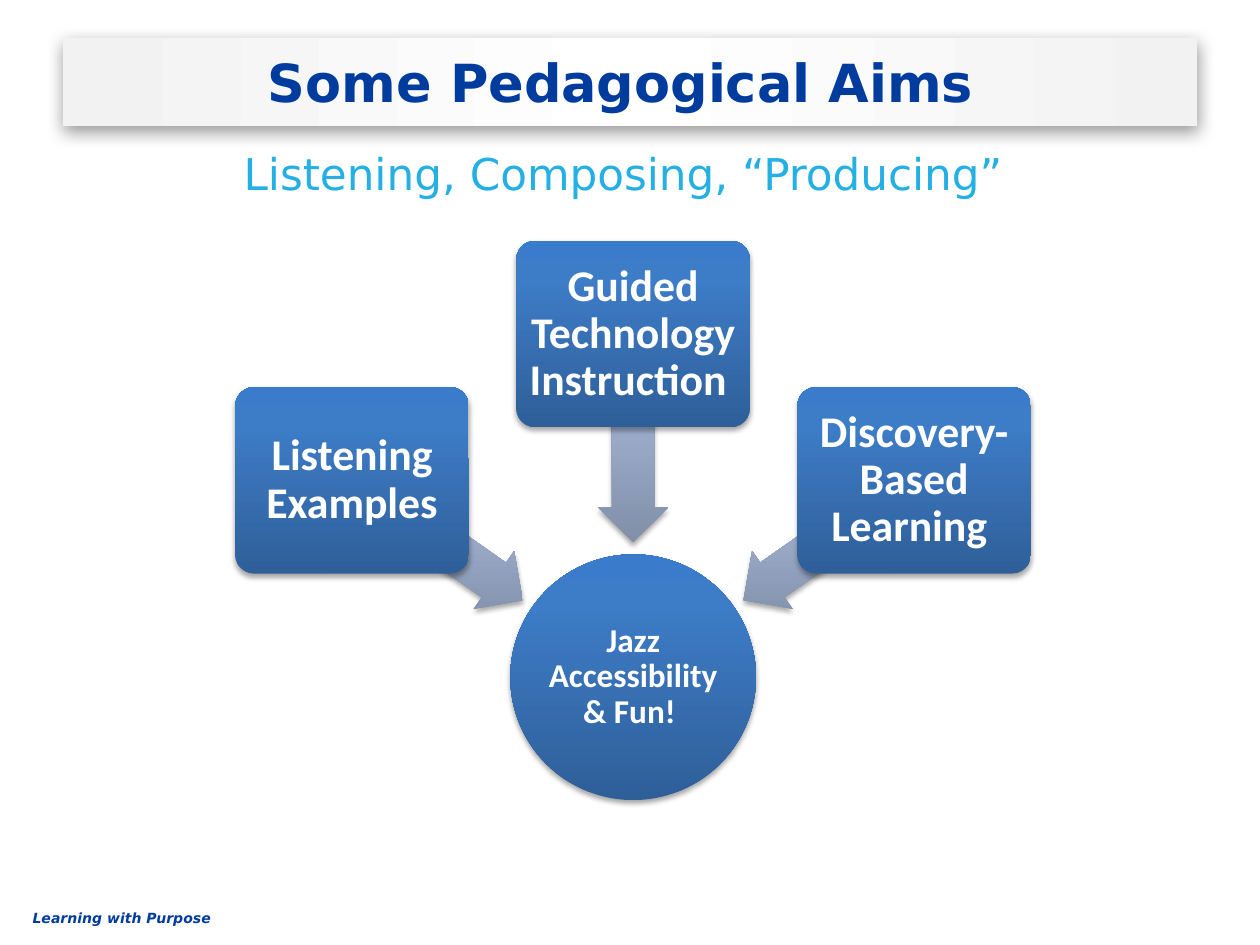
from dataclasses import dataclass

from pptx import Presentation
from pptx.dml.color import RGBColor
from pptx.enum.shapes import MSO_SHAPE
from pptx.enum.text import MSO_ANCHOR, PP_ALIGN
from pptx.oxml import parse_xml
from pptx.oxml.ns import nsdecls, qn
from pptx.util import Pt

HEX = {
    "navy": "003C9E", "sky": "24B0E3", "white": "FFFFFF", "black": "000000",
    "pale": "F2F2F2", "deep": "2F5F99", "blue": "3D7CC7", "bright": "3A7CCB",
    "slate": "818FA8", "mist": "A7B9DA", "haze": "A7BADC",
}


@dataclass(frozen=True)
class Grad:
    stops: tuple
    angle: int


@dataclass(frozen=True)
class Shade:
    alpha: int
    blur: float
    dist: float


@dataclass(frozen=True)
class Style:
    size: float
    color: str
    font: str = "DejaVu Sans"
    bold: bool = False
    italic: bool = False
    align: PP_ALIGN = PP_ALIGN.CENTER
    anchor: MSO_ANCHOR = MSO_ANCHOR.MIDDLE
    line: float = 1.0


@dataclass(frozen=True)
class Source:
    """One idea box and the arrow that leads from it to the goal."""
    text: str
    step: int
    top: float
    shift: float
    level: float
    turn: int


PLATE = Grad(((2, "pale"), (50, "white"), (100, "pale")), 0)
BLUE = Grad(((0, "deep"), (80, "blue"), (100, "bright")), 270)
GREY = Grad(((0, "slate"), (80, "mist"), (100, "haze")), 270)
WIDE, SOFT = Shade(40, 10, 3), Shade(35, 3.1, 1.8)

HEAD = Style(30, "navy", bold=True)
SUB = Style(25, "sky")
FOOT = Style(8, "navy", bold=True, italic=True, align=PP_ALIGN.LEFT,
             anchor=MSO_ANCHOR.TOP)
IDEA = Style(25, "white", "Calibri", bold=True, line=0.9)
GOAL = Style(19, "white", "Calibri", bold=True, line=0.9)

MID, STEP = 361.8, 160.6
BOX_W, BOX_H = 133.4, 106.6
ARROW_W, ARROW_H = 118.8, 40.3
RING, RING_TOP = 140.4, 316.8

SOURCES = (
    Source("Listening Examples", -1, 221.2, -111.7, 308.9, 215),
    Source("Guided Technology Instruction ", 0, 137.6, 0, 250.6, 270),
    Source("Discovery-Based Learning ", 1, 221.2, 111.7, 308.9, 325),
)


def write(shape, text: str, style: Style, inset: float | None = None) -> None:
    frame = shape.text_frame
    frame.text = text
    frame.word_wrap = True
    frame.vertical_anchor = style.anchor
    if inset is not None:
        frame.margin_left = frame.margin_right = Pt(inset)
        frame.margin_top = frame.margin_bottom = Pt(inset)
    para = frame.paragraphs[0]
    para.alignment = style.align
    para.line_spacing = style.line
    font = para.runs[0].font
    font.name, font.size = style.font, Pt(style.size)
    font.bold, font.italic = style.bold, style.italic
    font.color.rgb = RGBColor.from_string(HEX[style.color])


def label(slide, area: tuple, text: str, style: Style) -> None:
    write(slide.shapes.add_textbox(*map(Pt, area)), text, style)


def paint(shape, grad: Grad, shade: Shade) -> None:
    """Give a shape a page-aligned gradient, no outline and a drop shadow."""
    shape.line.fill.background()
    shape.fill.gradient()
    props = shape.fill._xPr
    stops = "".join(
        f'<a:gs pos="{pos * 1000}"><a:srgbClr val="{HEX[name]}"/></a:gs>'
        for pos, name in grad.stops)
    props.replace(props.find(qn("a:gradFill")), parse_xml(
        f'<a:gradFill {nsdecls("a")} rotWithShape="0"><a:gsLst>{stops}</a:gsLst>'
        f'<a:lin ang="{grad.angle * 60000}" scaled="0"/></a:gradFill>'))
    shape.shadow.inherit = False
    props.find(qn("a:effectLst")).append(parse_xml(
        f'<a:outerShdw {nsdecls("a")} blurRad="{Pt(shade.blur)}" '
        f'dist="{Pt(shade.dist)}" dir="5400000" rotWithShape="0">'
        f'<a:srgbClr val="{HEX["black"]}"><a:alpha val="{shade.alpha * 1000}"/>'
        '</a:srgbClr></a:outerShdw>'))


def block(slide, kind: MSO_SHAPE, area: tuple, grad: Grad, shade: Shade = SOFT):
    shape = slide.shapes.add_shape(kind, *map(Pt, area))
    paint(shape, grad, shade)
    return shape


def draw(slide, item: Source) -> None:
    area = (MID + item.shift - ARROW_W / 2, item.level - ARROW_H / 2,
            ARROW_W, ARROW_H)
    arrow = block(slide, MSO_SHAPE.LEFT_ARROW, area, GREY)
    arrow.adjustments[0], arrow.adjustments[1] = 0.6, 0.5
    arrow.rotation = item.turn
    left = MID + item.step * STEP - BOX_W / 2
    box = block(slide, MSO_SHAPE.ROUNDED_RECTANGLE,
                (left, item.top, BOX_W, BOX_H), BLUE)
    box.adjustments[0] = 0.1
    write(box, item.text, IDEA, 3.6)


def main() -> None:
    deck = Presentation()
    deck.slide_width, deck.slide_height = Pt(720), Pt(540)
    slide = deck.slides.add_slide(deck.slide_layouts[6])

    label(slide, (11.5, 516.2, 265.7, 17.3), "Learning with Purpose", FOOT)
    title = block(slide, MSO_SHAPE.RECTANGLE, (36, 21.6, 648, 50.4), PLATE, WIDE)
    write(title, "Some Pedagogical Aims ", HEAD)
    label(slide, (36, 77.8, 648, 41.8), "Listening, Composing, “Producing” ", SUB)

    goal = block(slide, MSO_SHAPE.OVAL,
                 (MID - RING / 2, RING_TOP, RING, RING), BLUE)
    write(goal, "Jazz Accessibility & Fun! ", GOAL, 0.7)
    for item in SOURCES:
        draw(slide, item)

    deck.save("out.pptx")


if __name__ == "__main__":
    main()
